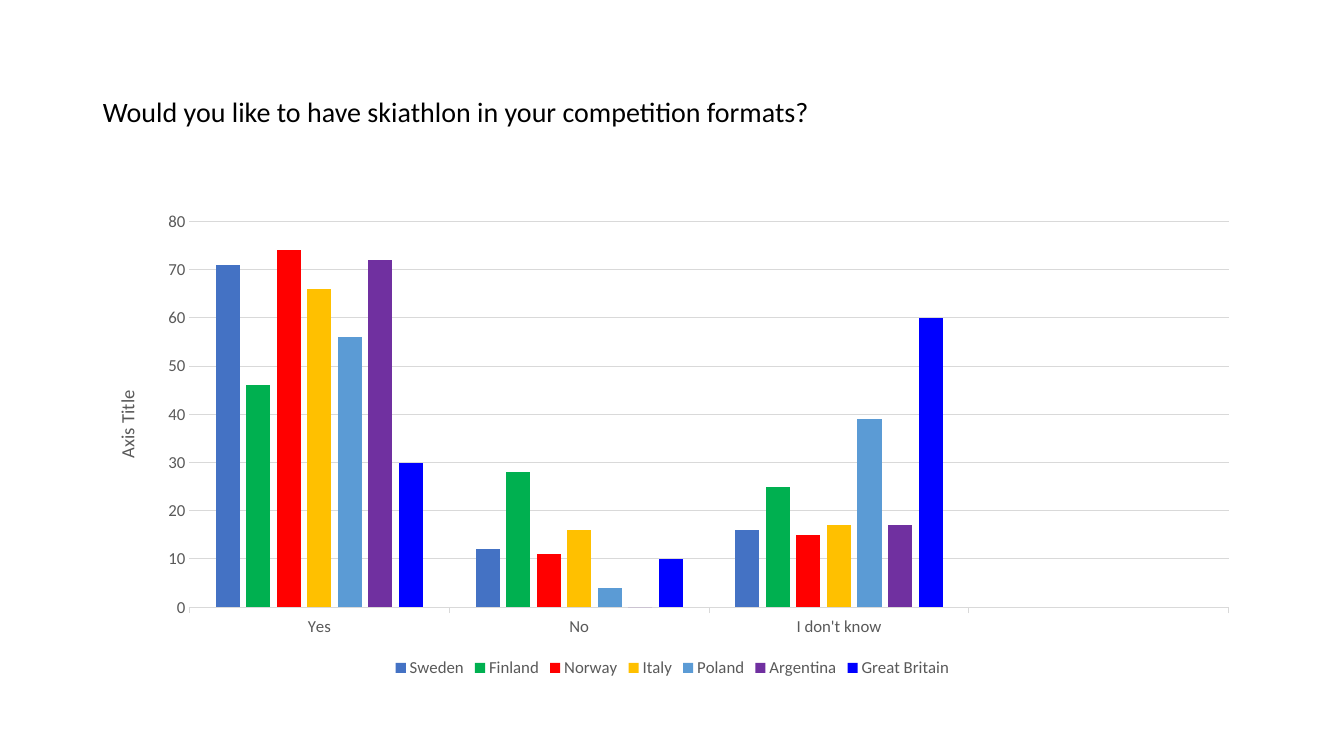
from pptx import Presentation
from pptx.chart.data import CategoryChartData
from pptx.dml.color import RGBColor
from pptx.enum.chart import XL_CHART_TYPE, XL_LEGEND_POSITION, XL_TICK_MARK
from pptx.enum.text import MSO_ANCHOR
from pptx.util import Pt

CLUSTERED = XL_CHART_TYPE.COLUMN_CLUSTERED
BOTTOM = XL_LEGEND_POSITION.BOTTOM
TICK_NONE, TICK_OUT = XL_TICK_MARK.NONE, XL_TICK_MARK.OUTSIDE
MIDDLE = MSO_ANCHOR.MIDDLE

THEME = {
    "font": "Calibri",
    "title": "000000",
    "label": "595959",
    "grid": "D9D9D9",
    "title_size": 20,
    "axis_title_size": 13.3,
    "label_size": 12,
    "line_width": 0.75,
}
ANSWERS = ["Yes", "No", "I don't know", ""]
COUNTRIES = [
    ("Sweden", "4472C4", [71, 12, 16, None]),
    ("Finland", "00B050", [46, 28, 25, None]),
    ("Norway", "FF0000", [74, 11, 15, None]),
    ("Italy", "FFC000", [66, 16, 17, None]),
    ("Poland", "5B9BD5", [56, 4, 39, None]),
    ("Argentina", "7030A0", [72, 0, 17, None]),
    ("Great Britain", "0000FF", [30, 10, 60, None]),
]


def px(length):
    return round(length * 914400 / 100.8)


def style_font(font, size, color):
    font.name = THEME["font"]
    font.size = Pt(THEME[size])
    font.bold = False
    font.color.rgb = RGBColor.from_string(THEME[color])


deck = Presentation()
deck.slide_width, deck.slide_height = px(1344), px(756)
page = deck.slides.add_slide(deck.slide_layouts[6])

# Question
box = page.shapes.add_textbox(px(93), px(40), px(1159), px(146))
frame = box.text_frame
frame.word_wrap = True
frame.vertical_anchor = MIDDLE
para = frame.paragraphs[0]
para.text = "Would you like to have skiathlon in your competition formats?"
para.line_spacing = 0.9
style_font(para.runs[0].font, "title_size", "title")

# Column chart of answers by country
data = CategoryChartData()
data.categories = ANSWERS
for country, color, values in COUNTRIES:
    data.add_series(country, values)
chart = page.shapes.add_chart(CLUSTERED, px(93), px(202), px(1159), px(480), data).chart
chart.has_title = False
style_font(chart.font, "label_size", "label")

plot = chart.plots[0]
plot.gap_width = 219
plot.overlap = -27
plot.vary_by_categories = False
for series, (country, color, values) in zip(plot.series, COUNTRIES):
    series.format.fill.solid()
    series.format.fill.fore_color.rgb = RGBColor.from_string(color)
    series.invert_if_negative = False

# Axes and grid
answer_axis, value_axis = chart.category_axis, chart.value_axis
answer_axis.major_tick_mark = TICK_OUT
value_axis.major_tick_mark = TICK_NONE
value_axis.minimum_scale, value_axis.maximum_scale = 0, 80
value_axis.major_unit = 10
value_axis.has_major_gridlines = True
value_axis.format.line.fill.background()
for line in (answer_axis.format.line, value_axis.major_gridlines.format.line):
    line.width = Pt(THEME["line_width"])
    line.color.rgb = RGBColor.from_string(THEME["grid"])
for axis in (answer_axis, value_axis):
    style_font(axis.tick_labels.font, "label_size", "label")

# Value axis title, turned to read upwards
title_frame = value_axis.axis_title.text_frame
title_frame.text = "Axis Title"
style_font(title_frame.paragraphs[0].runs[0].font, "axis_title_size", "label")
body = value_axis.axis_title._element.xpath(".//a:bodyPr")[0]
body.set("rot", "-5400000")
body.set("vert", "horz")

# Legend
chart.has_legend = True
chart.legend.position = BOTTOM
chart.legend.include_in_layout = False
style_font(chart.legend.font, "label_size", "label")

deck.save("out.pptx")
